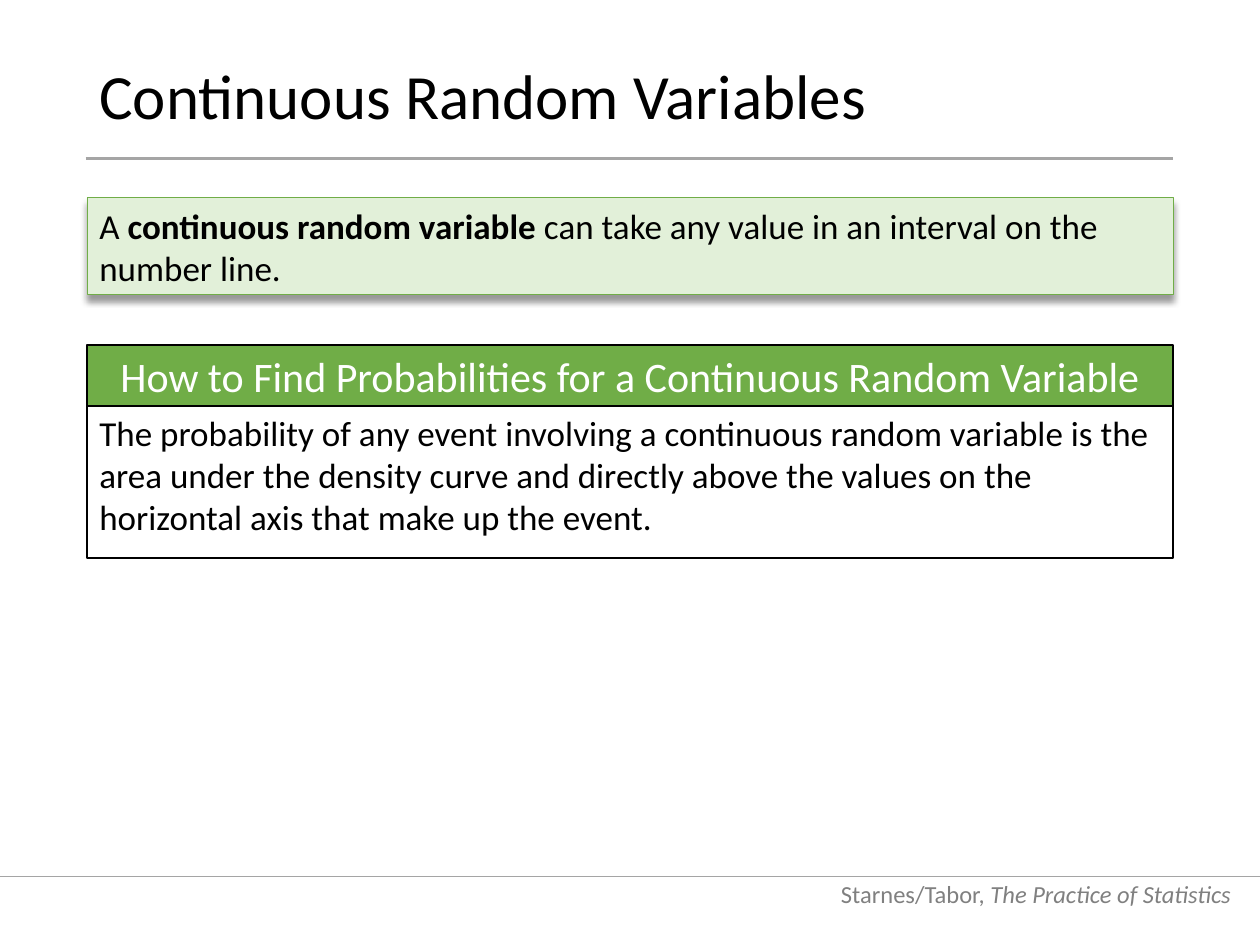
from dataclasses import dataclass

from lxml.etree import SubElement
from pptx import Presentation
from pptx.dml.color import RGBColor
from pptx.enum.shapes import MSO_CONNECTOR, MSO_SHAPE
from pptx.enum.text import MSO_ANCHOR, MSO_AUTO_SIZE, PP_ALIGN
from pptx.oxml.ns import qn
from pptx.util import Inches, Pt

LEFT, WIDTH = 0.69, 8.62
BLACK, WHITE, GREY, RULE_GREY = "000000", "FFFFFF", "808080", "A5A5A5"
GREEN, PALE_GREEN = "70AD47", "E2F0D9"


@dataclass
class Run:
    text: str
    bold: bool = False
    italic: bool = False


@dataclass
class Panel:
    left: float
    top: float
    width: float
    height: float
    paragraphs: list[list[Run]]
    size: float
    color: str = BLACK
    align: PP_ALIGN = PP_ALIGN.LEFT
    anchor: MSO_ANCHOR = MSO_ANCHOR.TOP
    line_spacing: float | None = None
    fill: str | None = None
    line: str | None = None
    line_width: float = 0
    grows: bool = False


@dataclass
class Rule:
    start: float
    end: float
    top: float
    width: float


def rgb(value: str) -> RGBColor:
    return RGBColor.from_string(value)


def write_text(frame, panel: Panel) -> None:
    frame.word_wrap = True
    frame.vertical_anchor = panel.anchor
    frame.auto_size = (MSO_AUTO_SIZE.SHAPE_TO_FIT_TEXT if panel.grows
                       else MSO_AUTO_SIZE.NONE)
    for index, runs in enumerate(panel.paragraphs):
        paragraph = frame.add_paragraph() if index else frame.paragraphs[0]
        paragraph.alignment = panel.align
        paragraph.line_spacing = panel.line_spacing
        for part in runs:
            run = paragraph.add_run()
            run.text = part.text
            formats = {"name": "Calibri", "size": Pt(panel.size),
                       "bold": part.bold, "italic": part.italic}
            for attribute, value in formats.items():
                setattr(run.font, attribute, value)
            run.font.color.rgb = rgb(panel.color)


def draw_panel(shapes, panel: Panel):
    bounds = [Inches(v) for v in (panel.left, panel.top, panel.width, panel.height)]
    if panel.line is None:
        shape = shapes.add_textbox(*bounds)
    else:
        shape = shapes.add_shape(MSO_SHAPE.RECTANGLE, *bounds)
        shape.shadow.inherit = False
        shape.line.color.rgb = rgb(panel.line)
        shape.line.width = Pt(panel.line_width)
        if panel.fill:
            shape.fill.solid()
            shape.fill.fore_color.rgb = rgb(panel.fill)
        else:
            shape.fill.background()
    write_text(shape.text_frame, panel)
    return shape


def add_shadow(shape) -> None:
    effects = shape.element.spPr.find(qn("a:effectLst"))
    shadow = SubElement(effects, qn("a:outerShdw"), blurRad=str(Pt(4)),
                        dist=str(Pt(3)), dir="5400000", rotWithShape="0")
    color = SubElement(shadow, qn("a:srgbClr"), val=BLACK)
    SubElement(color, qn("a:alpha"), val="40000")


def draw_rule(shapes, rule: Rule) -> None:
    line = shapes.add_connector(MSO_CONNECTOR.STRAIGHT, Inches(rule.start),
                                Inches(rule.top), Inches(rule.end), Inches(rule.top))
    line.line.color.rgb = rgb(RULE_GREY)
    line.line.width = Pt(rule.width)
    SubElement(line.element.spPr, qn("a:effectLst"))


FOOTER = Panel(6.47, 6.86, 3.4, 0.4,
               [[Run("Starnes/Tabor,"), Run(" The Practice of Statistics", italic=True)]],
               14, GREY, PP_ALIGN.RIGHT, MSO_ANCHOR.BOTTOM)
RULES = [Rule(0, 10, 6.96, 0.5), Rule(0.68, 9.31, 1.26, 1.5)]
TITLE = Panel(LEFT, 0.4, WIDTH, 0.78, [[Run("Continuous Random Variables")]], 36,
              anchor=MSO_ANCHOR.MIDDLE, line_spacing=0.9)
DEFINITION = Panel(
    LEFT, 1.57, WIDTH, 0.77,
    [[Run("A "), Run("continuous random variable ", bold=True),
      Run("can take any value in an interval on the number line.")]],
    20, fill=PALE_GREEN, line=GREEN, line_width=0.5, grows=True)
METHOD = [
    Panel(LEFT, 2.74, WIDTH, 0.48,
          [[Run("How to Find Probabilities for a Continuous Random Variable")]],
          24, WHITE, PP_ALIGN.CENTER, MSO_ANCHOR.MIDDLE,
          fill=GREEN, line=BLACK, line_width=1),
    Panel(LEFT, 3.22, WIDTH, 1.21,
          [[Run("The probability of any event involving a continuous random "
                "variable is the")],
           [Run("area under the density curve and directly above the values on "
                "the horizontal axis that make up the event.")]],
          20, line=BLACK, line_width=0.75),
]


def main() -> None:
    presentation = Presentation()
    presentation.slide_width, presentation.slide_height = Inches(10), Inches(7.5)
    slide = presentation.slides.add_slide(presentation.slide_layouts[6])
    shapes = slide.shapes

    # Footer and rules
    draw_panel(shapes, FOOTER)
    for rule in RULES:
        draw_rule(shapes, rule)

    # Title and definition
    draw_panel(shapes, TITLE)
    add_shadow(draw_panel(shapes, DEFINITION))

    # Method: heading and explanation, grouped
    method_group = shapes.add_group_shape()
    for panel in METHOD:
        draw_panel(method_group.shapes, panel)

    presentation.save("out.pptx")


if __name__ == "__main__":
    main()
